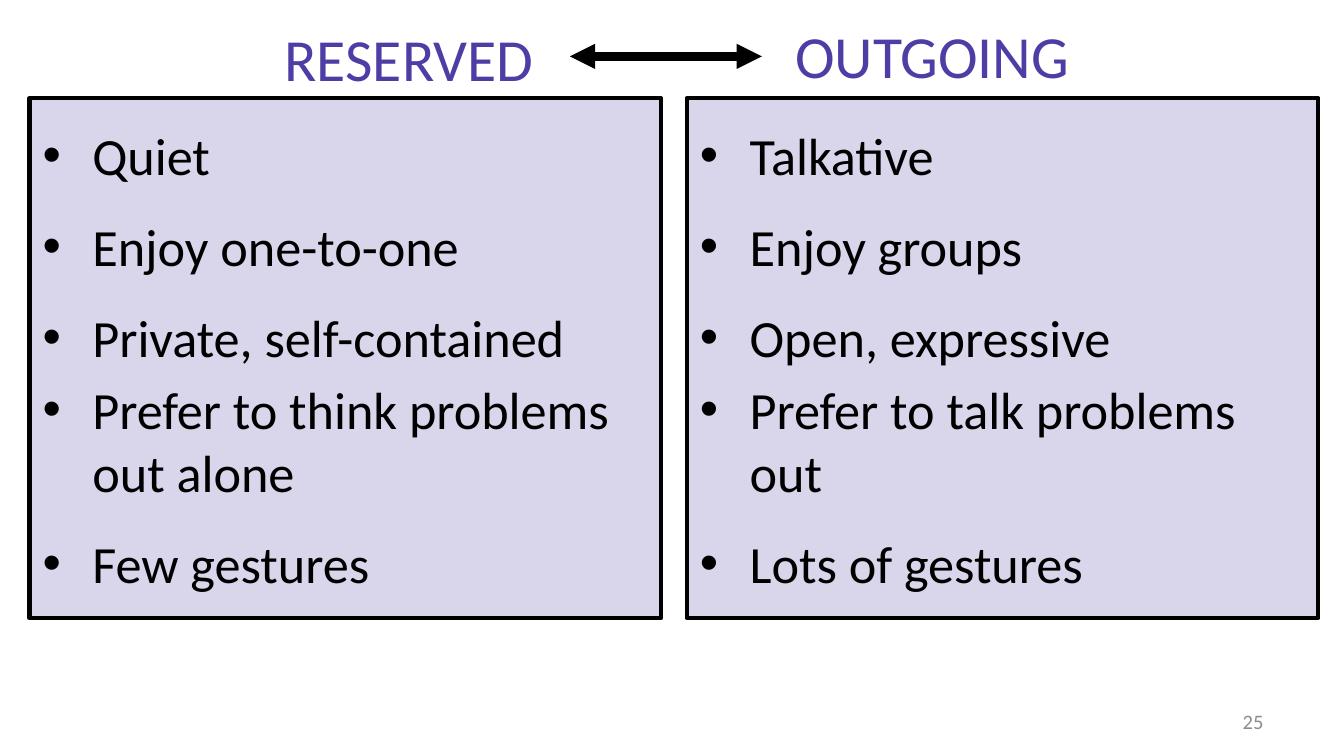
from lxml.etree import SubElement
from pptx import Presentation
from pptx.dml.color import RGBColor
from pptx.enum.shapes import MSO_CONNECTOR, MSO_SHAPE
from pptx.enum.text import MSO_ANCHOR, MSO_AUTO_SIZE, PP_ALIGN
from pptx.oxml.ns import qn
from pptx.util import Pt

PURPLE = RGBColor(0x4D, 0x3D, 0xA4)
BLACK = RGBColor(0x00, 0x00, 0x00)
GRAY = RGBColor(0x8C, 0x8C, 0x8C)

PANEL_TOP, PANEL_WIDTH, PANEL_HEIGHT = 52.6, 338.4, 278.6
RESERVED = ["Quiet", "Enjoy one-to-one", "Private, self-contained",
            "Prefer to think problems out alone", "Few gestures"]
OUTGOING = ["Talkative", "Enjoy groups", "Open, expressive",
            "Prefer to talk problems out", "Lots of gestures"]
SINGLE_SPACED = 3  # index of the trait that runs over two lines


class SlideBuilder:
    font_name = "Calibri"
    indent = 26.64

    def __init__(self, slide):
        self.slide = slide

    def style(self, paragraph, size, color):
        for run in paragraph.runs:
            run.font.name = self.font_name
            run.font.size = Pt(size)
            run.font.color.rgb = color

    def bullet(self, paragraph):
        properties = paragraph._p.get_or_add_pPr()
        properties.set("marL", str(Pt(self.indent)))
        properties.set("indent", str(-Pt(self.indent)))
        SubElement(properties, qn("a:buFont"), typeface="Arial")
        SubElement(properties, qn("a:buChar"), char="•")

    def panel(self, left, traits):
        shape = self.slide.shapes.add_shape(
            MSO_SHAPE.RECTANGLE, Pt(left), Pt(PANEL_TOP), Pt(PANEL_WIDTH), Pt(PANEL_HEIGHT))
        shape.shadow.inherit = False
        shape.fill.solid()
        shape.fill.fore_color.rgb = PURPLE
        color = shape.fill._xPr.find(qn("a:solidFill"))[0]
        SubElement(color, qn("a:alpha"), val="21000")
        shape.line.color.rgb = BLACK
        shape.line.width = Pt(2.25)
        text_frame = shape.text_frame
        text_frame.word_wrap = True
        text_frame.vertical_anchor = MSO_ANCHOR.TOP
        text_frame.text = "\n".join(traits)
        for index, paragraph in enumerate(text_frame.paragraphs):
            self.bullet(paragraph)
            paragraph.alignment = PP_ALIGN.LEFT
            paragraph.line_spacing = 1.0 if index == SINGLE_SPACED else 1.3
            if index:
                paragraph.space_before = Pt(5)
            self.style(paragraph, 28, BLACK)

    def text(self, text, left, top, width, height, size, color,
             alignment=PP_ALIGN.LEFT, anchor=MSO_ANCHOR.TOP, grow=False):
        box = self.slide.shapes.add_textbox(Pt(left), Pt(top), Pt(width), Pt(height))
        text_frame = box.text_frame
        text_frame.word_wrap = True
        text_frame.vertical_anchor = anchor
        if grow:
            text_frame.auto_size = MSO_AUTO_SIZE.SHAPE_TO_FIT_TEXT
        text_frame.text = text
        paragraph = text_frame.paragraphs[0]
        paragraph.alignment = alignment
        self.style(paragraph, size, color)

    def double_arrow(self, left, right, height):
        connector = self.slide.shapes.add_connector(
            MSO_CONNECTOR.STRAIGHT, Pt(left), Pt(height), Pt(right), Pt(height))
        connector.line.color.rgb = BLACK
        connector.line.width = Pt(4.5)
        line = connector.line._get_or_add_ln()
        for end in ("a:headEnd", "a:tailEnd"):
            SubElement(line, qn(end), type="triangle")
        SubElement(connector._element.spPr, qn("a:effectLst"))


def main():
    presentation = Presentation()
    presentation.slide_width = Pt(720)
    presentation.slide_height = Pt(405)
    builder = SlideBuilder(presentation.slides.add_slide(presentation.slide_layouts[6]))

    # Trait panels
    builder.panel(15.8, RESERVED)
    builder.panel(367.9, OUTGOING)

    # Headings with the arrow between them
    builder.text("OUTGOING", 419, 6.5, 184.3, 46.1, 32, PURPLE, grow=True)
    builder.text("RESERVED", 88.6, 7.9, 204.5, 46.1, 32, PURPLE, PP_ALIGN.RIGHT, grow=True)
    builder.double_arrow(305.3, 408.2, 30.2)

    # Slide number
    builder.text("25", 516.2, 375.4, 167.8, 21.6, 11, GRAY, PP_ALIGN.RIGHT, MSO_ANCHOR.MIDDLE)

    presentation.save("out.pptx")


if __name__ == "__main__":
    main()
